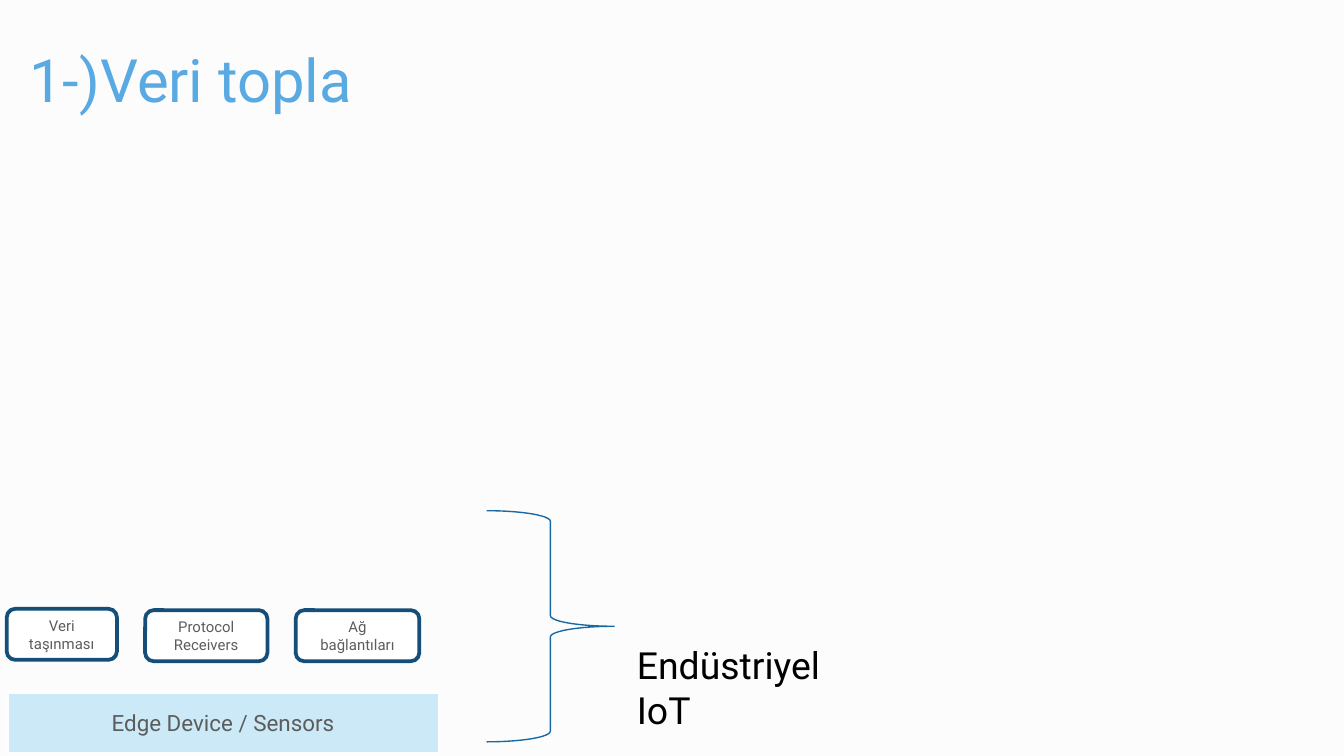
"""Build the data collection slide with its edge layer diagram."""
from dataclasses import dataclass

from pptx import Presentation
from pptx.dml.color import RGBColor
from pptx.enum.shapes import MSO_SHAPE
from pptx.enum.text import MSO_ANCHOR, PP_ALIGN
from pptx.util import Inches, Pt

RECT = MSO_SHAPE.RECTANGLE
ROUND_RECT = MSO_SHAPE.ROUNDED_RECTANGLE
RIGHT_BRACE = MSO_SHAPE.RIGHT_BRACE
MIDDLE = MSO_ANCHOR.MIDDLE
CENTER = PP_ALIGN.CENTER


@dataclass(frozen=True)
class Theme:
    font: str = "Roboto"
    background: str = "FCFCFC"
    title: str = "59A9E3"
    label: str = "000000"
    body: str = "5C5C5C"
    white: str = "FFFFFF"
    edge_fill: str = "CBE9F7"
    edge_line: str = "FDFDFD"
    box_line: str = "144E79"
    brace: str = "1768A3"
    title_size: float = 32
    label_size: float = 20
    edge_size: float = 12
    box_size: float = 8
    box_weight: float = 2
    brace_weight: float = 0.75


@dataclass(frozen=True)
class Area:
    left: float
    top: float
    width: float
    height: float

    def lengths(self) -> tuple:
        return tuple(map(Inches, (self.left, self.top, self.width, self.height)))


@dataclass(frozen=True)
class Box:
    text: str
    area: Area
    kind: int = ROUND_RECT
    fill: str = Theme.white
    line: str = Theme.box_line
    size: float = Theme.box_size


THEME = Theme()
BOXES = (
    Box("Edge Device / Sensors", Area(0.05, 5.15, 3.22, 0.46), RECT,
        THEME.edge_fill, THEME.edge_line, THEME.edge_size),
    Box("Veri taşınması", Area(0.05, 4.53, 0.82, 0.38)),
    Box("Protocol Receivers", Area(1.08, 4.54, 0.91, 0.38)),
    Box("Ağ bağlantıları", Area(2.2, 4.54, 0.92, 0.38)),
)


def rgb(color: str) -> RGBColor:
    return RGBColor.from_string(color)


def write(tf, text: str, size: float, color: str) -> None:
    tf.word_wrap = True
    r = tf.paragraphs[0].add_run()
    r.text = text
    r.font.name = THEME.font
    r.font.size = Pt(size)
    r.font.color.rgb = rgb(color)


def add_text(s, area: Area, text: str, size: float, color: str) -> None:
    sp = s.shapes.add_textbox(*area.lengths())
    write(sp.text_frame, text, size, color)


def add_outlined(s, kind: int, area: Area, line: str, weight: float):
    sp = s.shapes.add_shape(kind, *area.lengths())
    sp.shadow.inherit = False
    sp.line.color.rgb = rgb(line)
    sp.line.width = Pt(weight)
    return sp


def add_box(s, box: Box) -> None:
    sp = add_outlined(s, box.kind, box.area, box.line, THEME.box_weight)
    sp.fill.solid()
    sp.fill.fore_color.rgb = rgb(box.fill)
    tf = sp.text_frame
    tf.vertical_anchor = MIDDLE
    tf.paragraphs[0].alignment = CENTER
    write(tf, box.text, box.size, THEME.body)


def main() -> None:
    prs = Presentation()
    prs.slide_width = Inches(10)
    prs.slide_height = Inches(10 * 9 / 16)
    s = prs.slides.add_slide(prs.slide_layouts[6])
    s.background.fill.solid()
    s.background.fill.fore_color.rgb = rgb(THEME.background)

    add_text(s, Area(0.12, 0.27, 2.68, 0.64), "1-)Veri topla",
             THEME.title_size, THEME.title)
    add_text(s, Area(4.64, 4.73, 2.02, 0.44), "Endüstriyel IoT",
             THEME.label_size, THEME.label)
    for box in BOXES:
        add_box(s, box)
    brace = add_outlined(s, RIGHT_BRACE, Area(3.62, 3.8, 0.95, 1.72),
                         THEME.brace, THEME.brace_weight)
    brace.fill.background()
    prs.save("out.pptx")


if __name__ == "__main__":
    main()
